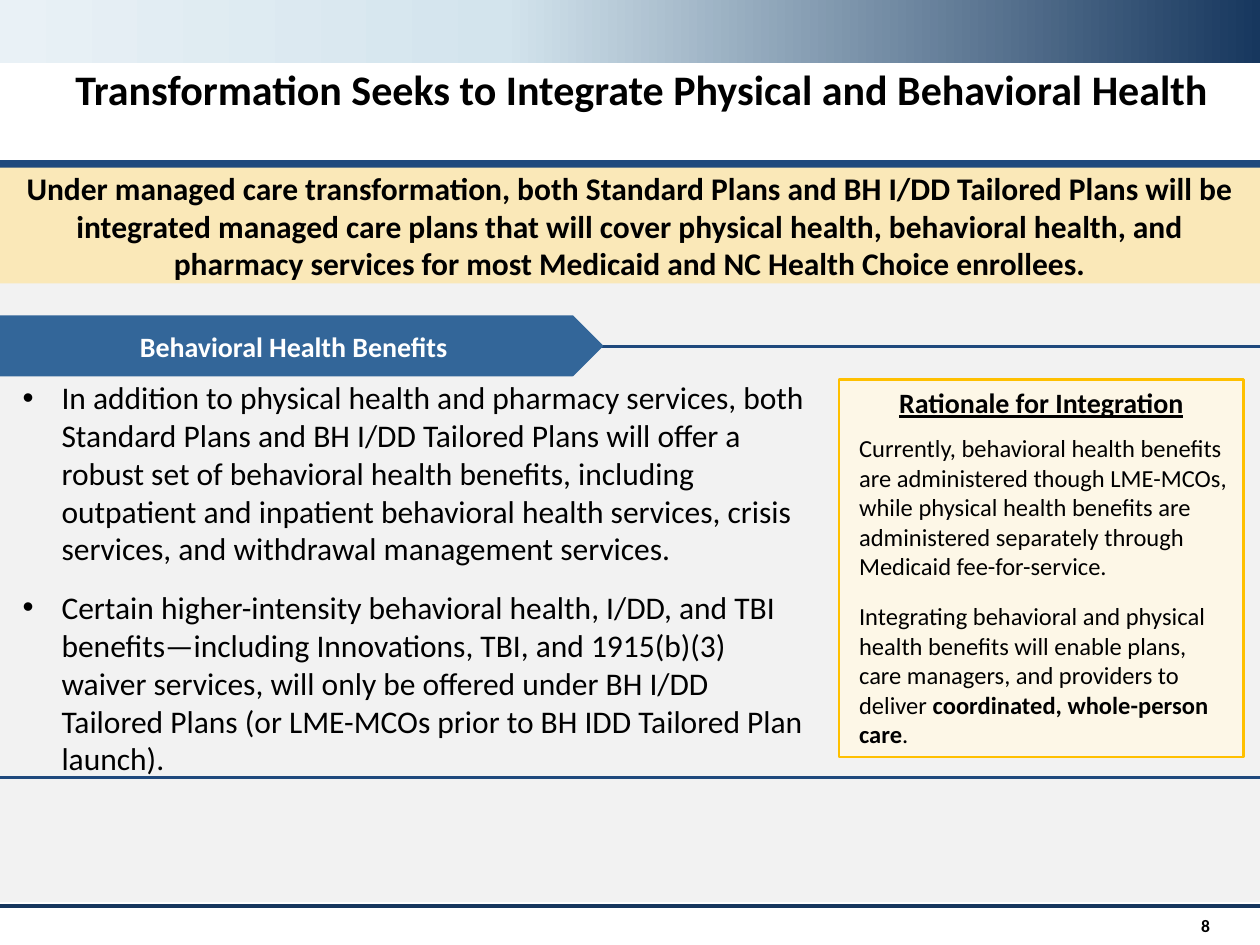
from copy import deepcopy

from lxml import etree
from pptx import Presentation
from pptx.dml.color import RGBColor
from pptx.enum.shapes import MSO_CONNECTOR, MSO_SHAPE
from pptx.enum.text import MSO_ANCHOR, PP_ALIGN
from pptx.oxml.ns import qn
from pptx.util import Inches, Pt

RECTANGLE, PENTAGON = MSO_SHAPE.RECTANGLE, MSO_SHAPE.PENTAGON
STRAIGHT = MSO_CONNECTOR.STRAIGHT
TOP, MIDDLE = MSO_ANCHOR.TOP, MSO_ANCHOR.MIDDLE
LEFT, CENTER, RIGHT = PP_ALIGN.LEFT, PP_ALIGN.CENTER, PP_ALIGN.RIGHT

COLORS = {
    "black": "000000", "white": "FFFFFF", "navy": "17375E", "rule": "1F497D",
    "sky": "D3E4ED", "mist": "E9F1F6", "panel": "F2F2F2", "banner": "FAE8B8",
    "tab": "336699", "note": "FDF7E7", "gold": "FFC000",
}
COLUMNS, ROWS = 100, 75

TITLE = "Transformation Seeks to Integrate Physical and Behavioral Health"
BANNER = (
    "Under managed care transformation, both Standard Plans and BH I/DD Tailored Plans "
    "will be integrated managed care plans that will cover physical health, behavioral "
    "health, and pharmacy services for most Medicaid and NC Health Choice enrollees."
)
BENEFITS = [
    "In addition to physical health and pharmacy services, both Standard Plans and BH I/DD "
    "Tailored Plans will offer a robust set of behavioral health benefits, including "
    "outpatient and inpatient behavioral health services, crisis services, and withdrawal "
    "management services.",
    "Certain higher-intensity behavioral health, I/DD, and TBI benefits—including "
    "Innovations, TBI, and 1915(b)(3) waiver services, will only be offered under BH I/DD "
    "Tailored Plans (or LME-MCOs prior to BH IDD Tailored Plan launch).",
]
RATIONALE = [
    "Currently, behavioral health benefits are administered though LME-MCOs, while physical "
    "health benefits are administered separately through Medicaid fee-for-service.",
    "Integrating behavioral and physical health benefits will enable plans, care managers, "
    "and providers to deliver ",
]


def rgb(name):
    return RGBColor.from_string(COLORS[name])


class SlideBuilder:
    font = "Calibri"

    def __init__(self, presentation):
        self.slide = presentation.slides.add_slide(presentation.slide_layouts[6])
        self.column = presentation.slide_width / COLUMNS
        self.row = presentation.slide_height / ROWS

    def place(self, left, top, width, height):
        return (round(left * self.column), round(top * self.row),
                round(width * self.column), round(height * self.row))

    def box(self, area, fill, line=None, weight=1, kind=RECTANGLE):
        shape = self.slide.shapes.add_shape(kind, *self.place(*area))
        shape.shadow.inherit = False
        shape.fill.solid()
        shape.fill.fore_color.rgb = rgb(fill)
        if line:
            shape.line.color.rgb = rgb(line)
            shape.line.width = Pt(weight)
        else:
            shape.line.fill.background()
        return shape

    def gradient_band(self, area, stops):
        shape = self.box(area, stops[0][1])
        shape.fill.gradient()
        shape.fill.gradient_angle = 180
        stop_list = shape._element.spPr.find(qn("a:gradFill")).find(qn("a:gsLst"))
        while len(stop_list) < len(stops):
            stop_list.append(deepcopy(stop_list[0]))
        for stop, (position, color) in zip(shape.fill.gradient_stops, stops):
            stop.position = position
            stop.color.rgb = rgb(color)

    def rule(self, row, color, weight):
        y = round(row * self.row)
        line = self.slide.shapes.add_connector(STRAIGHT, 0, y, round(COLUMNS * self.column), y)
        line.line.color.rgb = rgb(color)
        line.line.width = Pt(weight)
        etree.SubElement(line._element.spPr, qn("a:effectLst"))

    def text_box(self, area):
        return self.slide.shapes.add_textbox(*self.place(*area))

    def set_text(self, shape, paragraphs, size, color="black", bold=False,
                 align=LEFT, anchor=MIDDLE, gap=0):
        frame = shape.text_frame
        frame.word_wrap = True
        frame.vertical_anchor = anchor
        frame.text = "\n".join(paragraphs)
        for paragraph in frame.paragraphs:
            paragraph.alignment = align
            paragraph.space_after = Pt(gap)
            for run in paragraph.runs:
                self.style_run(run, size, color, bold)
        return frame

    def style_run(self, run, size, color, bold):
        run.font.name = self.font
        run.font.size = Pt(size)
        run.font.bold = bold
        run.font.color.rgb = rgb(color)

    def indent(self, frame, margin, hanging=0, bullet=None):
        for paragraph in frame.paragraphs:
            properties = paragraph._p.get_or_add_pPr()
            properties.set("marL", str(Inches(margin)))
            properties.set("indent", str(Inches(-hanging)))
            if bullet:
                etree.SubElement(properties, qn("a:buFont")).set("typeface", "Arial")
                etree.SubElement(properties, qn("a:buChar")).set("char", bullet)


def main():
    presentation = Presentation()
    presentation.slide_width, presentation.slide_height = Inches(10), Inches(7.5)
    builder = SlideBuilder(presentation)

    builder.gradient_band((0, 0, COLUMNS, 5), [(0, "navy"), (0.6, "sky"), (1, "mist")])
    builder.rule(71.9, "navy", 2.25)
    title = builder.text_box((5, 5, 93.7, 6))
    frame = builder.set_text(title, [TITLE], 24, bold=True, anchor=TOP)
    frame.paragraphs[0].line_spacing = 0.9
    builder.rule(13, "rule", 4.5)

    builder.box((0, 20.8, COLUMNS, 50.8), "panel")
    banner = builder.box((0, 13.3, COLUMNS, 9.2), "banner")
    frame = builder.set_text(banner, [BANNER], 18, bold=True, align=CENTER)
    frame.margin_top = frame.margin_bottom = Inches(0.06)
    page_number = builder.text_box((90.8, 71.9, 6.2, 3.1))
    builder.set_text(page_number, ["8"], 10, bold=True, align=RIGHT)

    builder.rule(27.5, "rule", 1.5)
    benefits = builder.text_box((0.2, 29.2, 64.8, 33.3))
    frame = builder.set_text(benefits, BENEFITS, 18, gap=12)
    builder.indent(frame, 0.37, 0.31, "•")
    tab = builder.box((0, 25.1, 47.8, 4.7), "tab", "tab", kind=PENTAGON)
    builder.set_text(tab, ["Behavioral Health Benefits"], 16, "white", True, CENTER)

    rationale = builder.box((66.6, 30.1, 32.1, 30), "note", "gold", 1.5)
    frame = builder.set_text(rationale, RATIONALE, 14, anchor=TOP, gap=12)
    frame.margin_top, frame.margin_bottom = Inches(0.43), 0
    builder.indent(frame, 0.06)
    for text, bold in (("coordinated, whole-person care", True), (".", False)):
        run = frame.paragraphs[-1].add_run()
        run.text = text
        builder.style_run(run, 14, "black", bold)
    heading = builder.text_box((66.6, 30.1, 32.1, 3.7))
    frame = builder.set_text(heading, ["Rationale for Integration"], 16, bold=True,
                             align=CENTER, anchor=TOP)
    frame.paragraphs[0].runs[0].font.underline = True
    builder.rule(61.7, "rule", 1.5)

    presentation.save("out.pptx")


if __name__ == "__main__":
    main()
